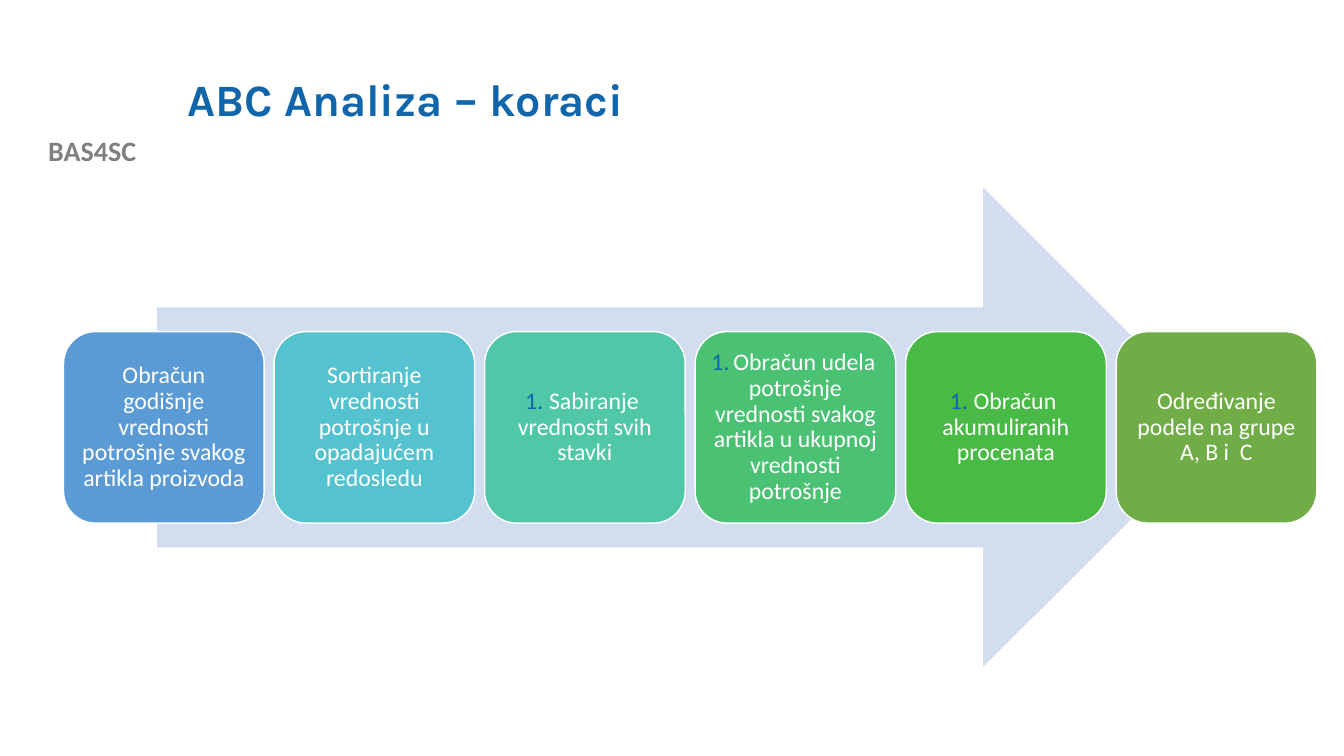
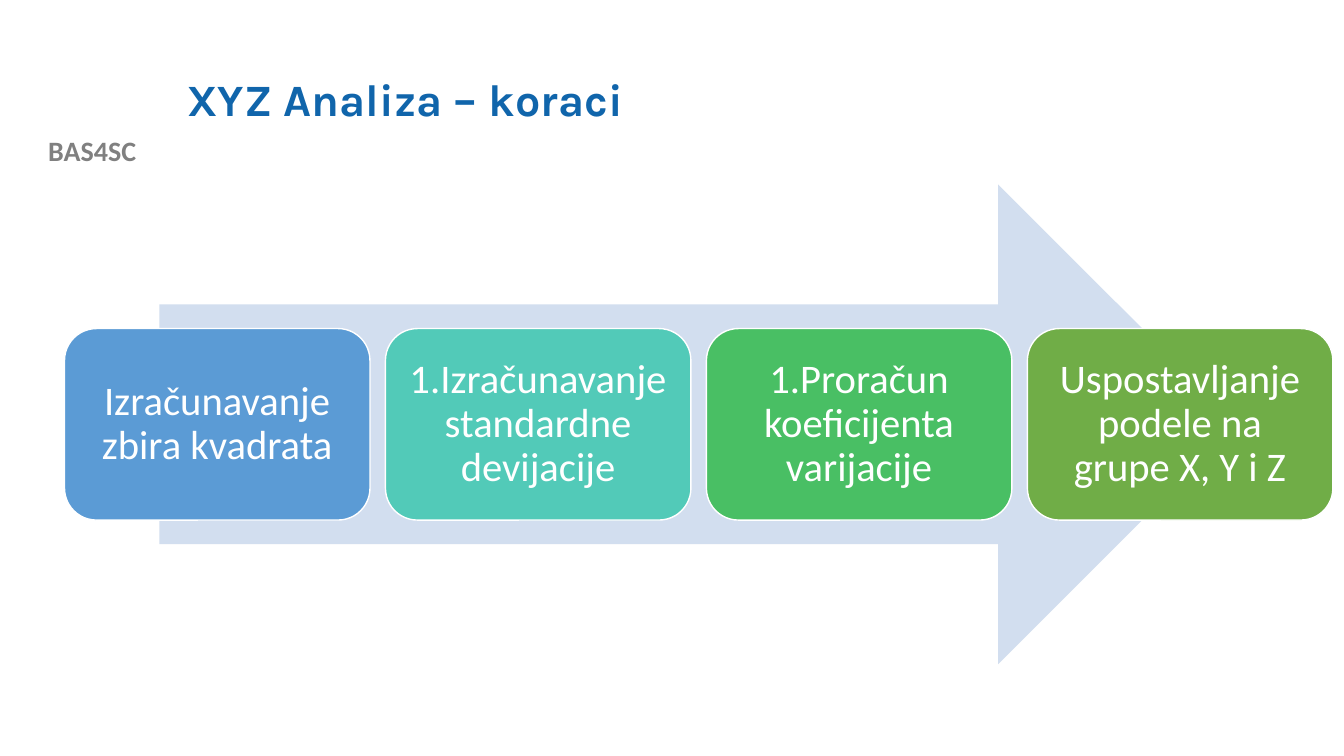
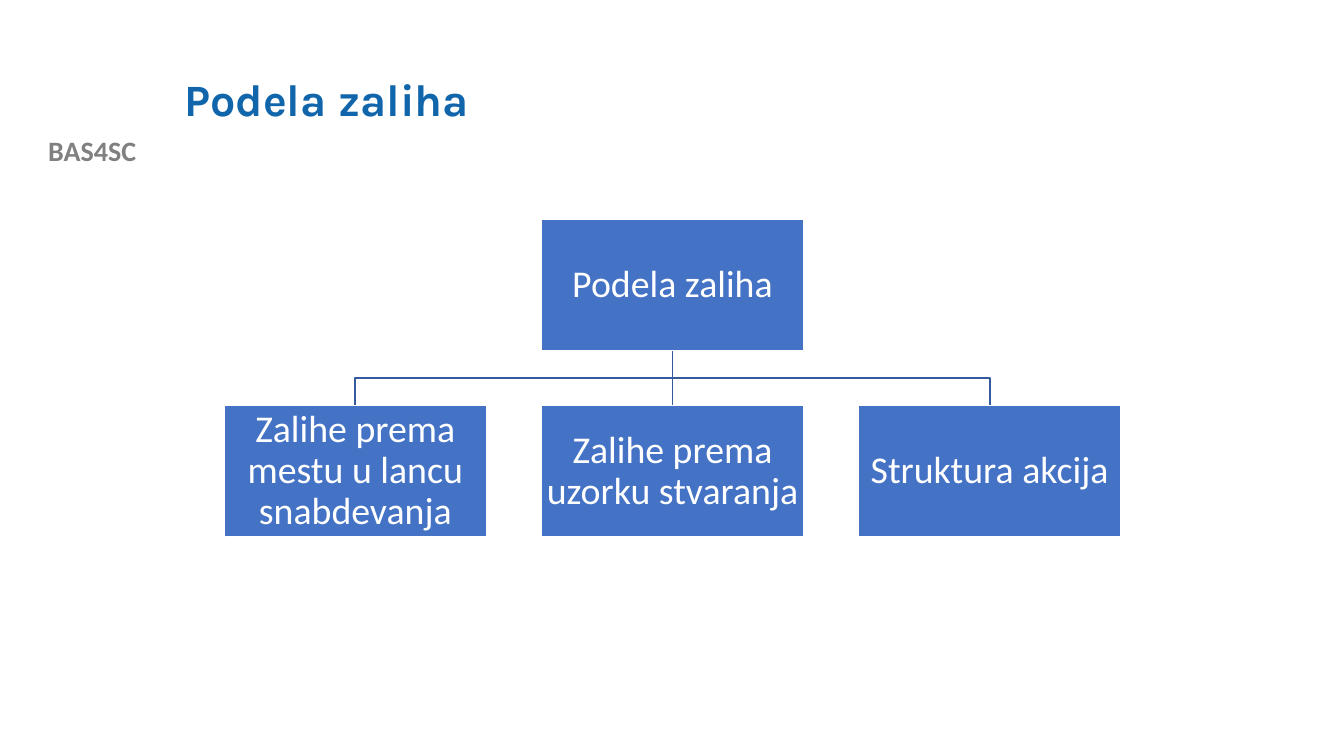
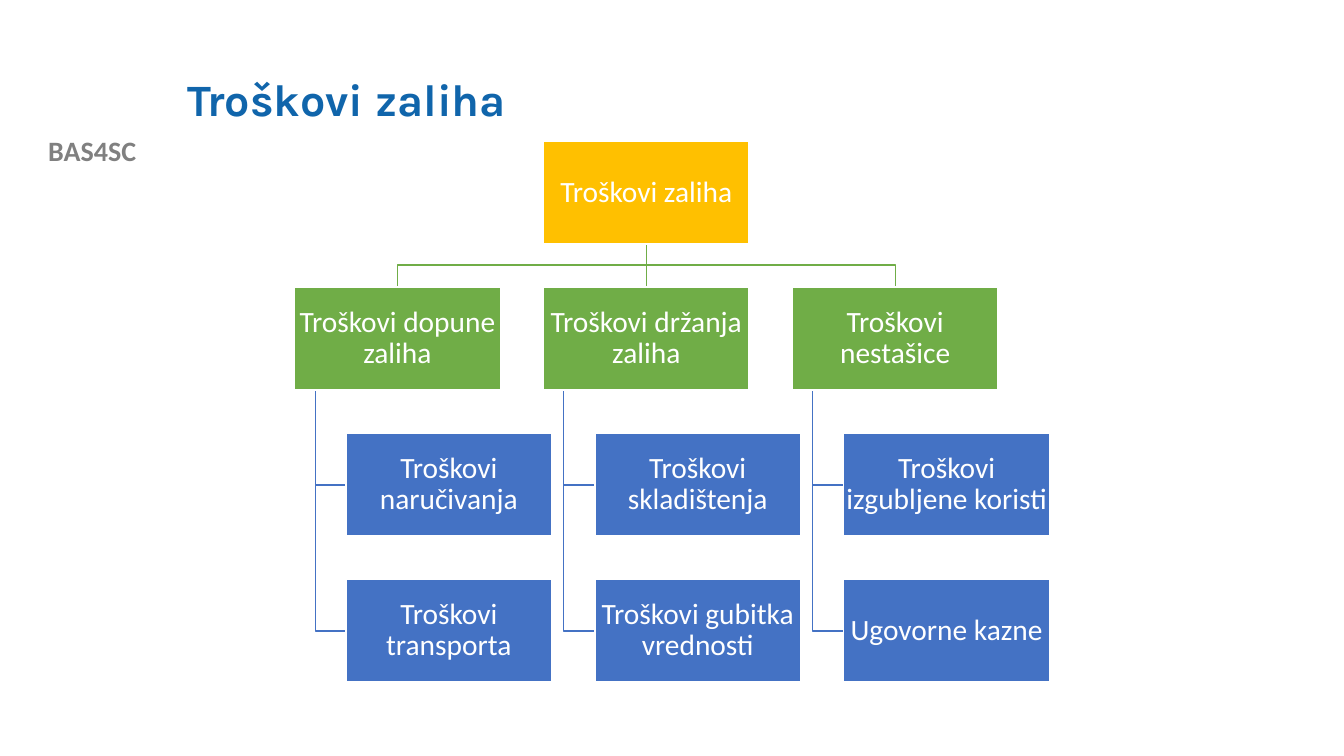
from dataclasses import dataclass

from lxml import etree
from pptx import Presentation
from pptx import util as u
from pptx.dml.color import RGBColor
from pptx.enum import shapes, text
from pptx.oxml import ns

PX = 9144  # EMU in one px: 100 px to the inch


@dataclass(frozen=True)
class Theme:
    title_font: str = "Karla"
    body_font: str = "Calibri"
    title_size: int = 32
    label_size: int = 20
    title: str = "1065AB"
    label: str = "808080"
    white: str = "FFFFFF"
    arrow: str = "D2DEEF"
    blue: str = "4472C4"
    dark_blue: str = "365B9D"
    green: str = "70AD47"
    gold: str = "FFC000"


THEME = Theme()


@dataclass(frozen=True)
class Area:
    left: float
    top: float
    width: float
    height: float

    @property
    def center(self) -> float:
        return self.left + self.width / 2

    @property
    def middle(self) -> float:
        return self.top + self.height / 2

    @property
    def bottom(self) -> float:
        return self.top + self.height

    def emu(self) -> list[int]:
        return [px(n) for n in (self.left, self.top, self.width, self.height)]


@dataclass(frozen=True)
class Step:
    words: str
    fill: str
    numbered: bool = False


@dataclass(frozen=True)
class Flow:
    arrow: Area
    first: Area
    right: int
    size: int
    inset: int
    steps: tuple[Step, ...]
    number_color: str


@dataclass(frozen=True)
class Branch:
    words: str
    leaves: tuple[str, ...] = ()


@dataclass(frozen=True)
class Tree:
    root: str
    center: int
    top: int
    width: int
    size: int
    inset: int
    root_fill: str
    branch_fill: str
    branch_line: str
    branches: tuple[Branch, ...]


def px(length: float) -> int:
    return round(length * PX)


def rgb(code: str) -> RGBColor:
    return RGBColor.from_string(code)


# Text
def write(box, words: str, font: str, size: int, color: str, bold: bool = False,
          align=text.PP_ALIGN.CENTER, spacing: float = 1.0, number_color: str = "") -> None:
    box.text_frame.word_wrap = True
    para = box.text_frame.paragraphs[0]
    para.text = words
    para.alignment = align
    para.line_spacing = spacing
    if number_color:
        props = para._p.get_or_add_pPr()
        tint = etree.SubElement(props, ns.qn("a:buClr"))
        etree.SubElement(tint, ns.qn("a:srgbClr"), val=number_color)
        etree.SubElement(props, ns.qn("a:buAutoNum"), type="arabicPeriod")
    para.font.name = font
    para.font.size = u.Pt(size)
    para.font.bold = bold
    para.font.color.rgb = rgb(color)


# Shapes and lines
def add_block(page, kind, area: Area, fill: str, line: str = ""):
    block = page.shapes.add_shape(kind, *area.emu())
    block.shadow.inherit = False
    block.fill.solid()
    block.fill.fore_color.rgb = rgb(fill)
    if line:
        block.line.color.rgb = rgb(line)
        block.line.width = u.Pt(1)
    else:
        block.line.fill.background()
    return block


def add_node(page, kind, area: Area, words: str, fill: str, size: int, inset: int,
             number_color: str = "") -> None:
    node = add_block(page, kind, area, fill, THEME.white)
    frame = node.text_frame
    frame.vertical_anchor = text.MSO_ANCHOR.MIDDLE
    frame.margin_left = frame.margin_right = px(inset)
    frame.margin_top = frame.margin_bottom = px(inset)
    write(node, words, THEME.body_font, size, THEME.white,
          spacing=0.9, number_color=number_color)


def add_link(page, points: list[tuple[float, float]], color: str) -> None:
    if len(points) == 2:
        (x1, y1), (x2, y2) = points
        link = page.shapes.add_connector(
            shapes.MSO_CONNECTOR.STRAIGHT, px(x1), px(y1), px(x2), px(y2))
        etree.SubElement(link._element.spPr, ns.qn("a:effectLst"))
    else:
        builder = page.shapes.build_freeform(*points[0], scale=PX)
        builder.add_line_segments(points[1:], close=False)
        link = builder.convert_to_shape()
        link.fill.background()
        link.shadow.inherit = False
    link.line.color.rgb = rgb(color)
    link.line.width = u.Pt(1)


# Shared page: course label and title
def add_page(deck, title: str, title_left: int = 176):
    page = deck.slides.add_slide(deck.slide_layouts[6])
    label = page.shapes.add_textbox(*Area(0, 128, 183, 44).emu())
    write(label, "BAS4SC", THEME.body_font, THEME.label_size, THEME.label, bold=True)
    heading = page.shapes.add_textbox(*Area(title_left, 40, 1066, 122).emu())
    heading.text_frame.vertical_anchor = text.MSO_ANCHOR.MIDDLE
    write(heading, title, THEME.title_font, THEME.title_size, THEME.title, bold=True,
          align=text.PP_ALIGN.LEFT, spacing=0.9)
    return page


# Steps spread evenly over an arrow
def draw_flow(page, flow: Flow) -> None:
    add_block(page, shapes.MSO_SHAPE.RIGHT_ARROW, flow.arrow, THEME.arrow)
    first = flow.first
    pitch = (flow.right - first.left - first.width) / (len(flow.steps) - 1)
    for i, step in enumerate(flow.steps):
        area = Area(first.left + i * pitch, first.top, first.width, first.height)
        add_node(page, shapes.MSO_SHAPE.ROUNDED_RECTANGLE, area, step.words, step.fill,
                 flow.size, flow.inset, flow.number_color if step.numbered else "")


# Root, a row of branches, and leaves hanging below each branch
def draw_tree(page, tree: Tree) -> None:
    width, height = tree.width, tree.width / 2
    gap = 0.21 * width
    root = Area(tree.center - width / 2, tree.top, width, height)
    nodes = [(root, tree.root, tree.root_fill)]
    for i, branch in enumerate(tree.branches):
        shift = (i - (len(tree.branches) - 1) / 2) * (width + gap)
        area = Area(root.left + shift, root.bottom + gap, width, height)
        nodes.append((area, branch.words, tree.branch_fill))
        bend = root.bottom + gap / 2
        turns = [(root.center, bend), (area.center, bend)] if shift else []
        add_link(page, [(root.center, root.bottom), *turns, (area.center, area.top)],
                 tree.branch_line)
        stem = area.left + width / 10
        for row, words in enumerate(branch.leaves, start=1):
            leaf = Area(area.left + width / 4, area.top + row * (height + gap),
                        width, height)
            nodes.append((leaf, words, THEME.blue))
            add_link(page, [(stem, area.bottom), (stem, leaf.middle),
                            (leaf.left, leaf.middle)], THEME.blue)
    for area, words, fill in nodes:
        add_node(page, shapes.MSO_SHAPE.RECTANGLE, area, words, fill, tree.size, tree.inset)


# Content
ABC_FLOW = Flow(
    arrow=Area(156, 186, 1057, 476), first=Area(63, 329, 199, 190), right=1306,
    size=17, inset=7, number_color=THEME.title,
    steps=(
        Step("Obračun godišnje vrednosti potrošnje svakog artikla proizvoda", "5B9BD5"),
        Step("Sortiranje vrednosti potrošnje u opadajućem redosledu", "55C3CF"),
        Step("Sabiranje vrednosti svih stavki", "50C8A7", True),
        Step("Obračun udela potrošnje vrednosti svakog artikla u ukupnoj vrednosti potrošnje",
             "4BC174", True),
        Step("Obračun akumuliranih procenata", "4ABA46", True),
        Step("Određivanje podele na grupe A, B i  C", THEME.green),
    ),
)
XYZ_FLOW = Flow(
    arrow=Area(158, 183, 1070, 476), first=Area(64, 326, 303, 190), right=1322,
    size=29, inset=12, number_color=THEME.white,
    steps=(
        Step("Izračunavanje zbira kvadrata", "5B9BD5"),
        Step("Izračunavanje standardne devijacije", "52CAB8", True),
        Step("Proračun koeficijenta varijacije", "49BF64", True),
        Step("Uspostavljanje podele na grupe X, Y i Z", THEME.green),
    ),
)
STOCK_TREE = Tree(
    "Podela zaliha", center=667, top=218, width=260, size=27, inset=2,
    root_fill=THEME.blue, branch_fill=THEME.blue, branch_line=THEME.dark_blue,
    branches=(
        Branch("Zalihe prema mestu u lancu snabdevanja"),
        Branch("Zalihe prema uzorku stvaranja"),
        Branch("Struktura akcija"),
    ),
)
COST_TREE = Tree(
    "Troškovi zaliha", center=641, top=140, width=204, size=21, inset=1,
    root_fill=THEME.gold, branch_fill=THEME.green, branch_line=THEME.green,
    branches=(
        Branch("Troškovi dopune zaliha", ("Troškovi naručivanja", "Troškovi transporta")),
        Branch("Troškovi držanja zaliha",
               ("Troškovi skladištenja", "Troškovi gubitka vrednosti")),
        Branch("Troškovi nestašice", ("Troškovi izgubljene koristi", "Ugovorne kazne")),
    ),
)


def main() -> None:
    deck = Presentation()
    deck.slide_width, deck.slide_height = px(1333), px(750)
    draw_flow(add_page(deck, "ABC Analiza – koraci"), ABC_FLOW)
    draw_flow(add_page(deck, "XYZ Analiza – koraci"), XYZ_FLOW)
    draw_tree(add_page(deck, "Podela zaliha", title_left=173), STOCK_TREE)
    draw_tree(add_page(deck, "Troškovi zaliha"), COST_TREE)
    deck.save("out.pptx")


if __name__ == "__main__":
    main()
